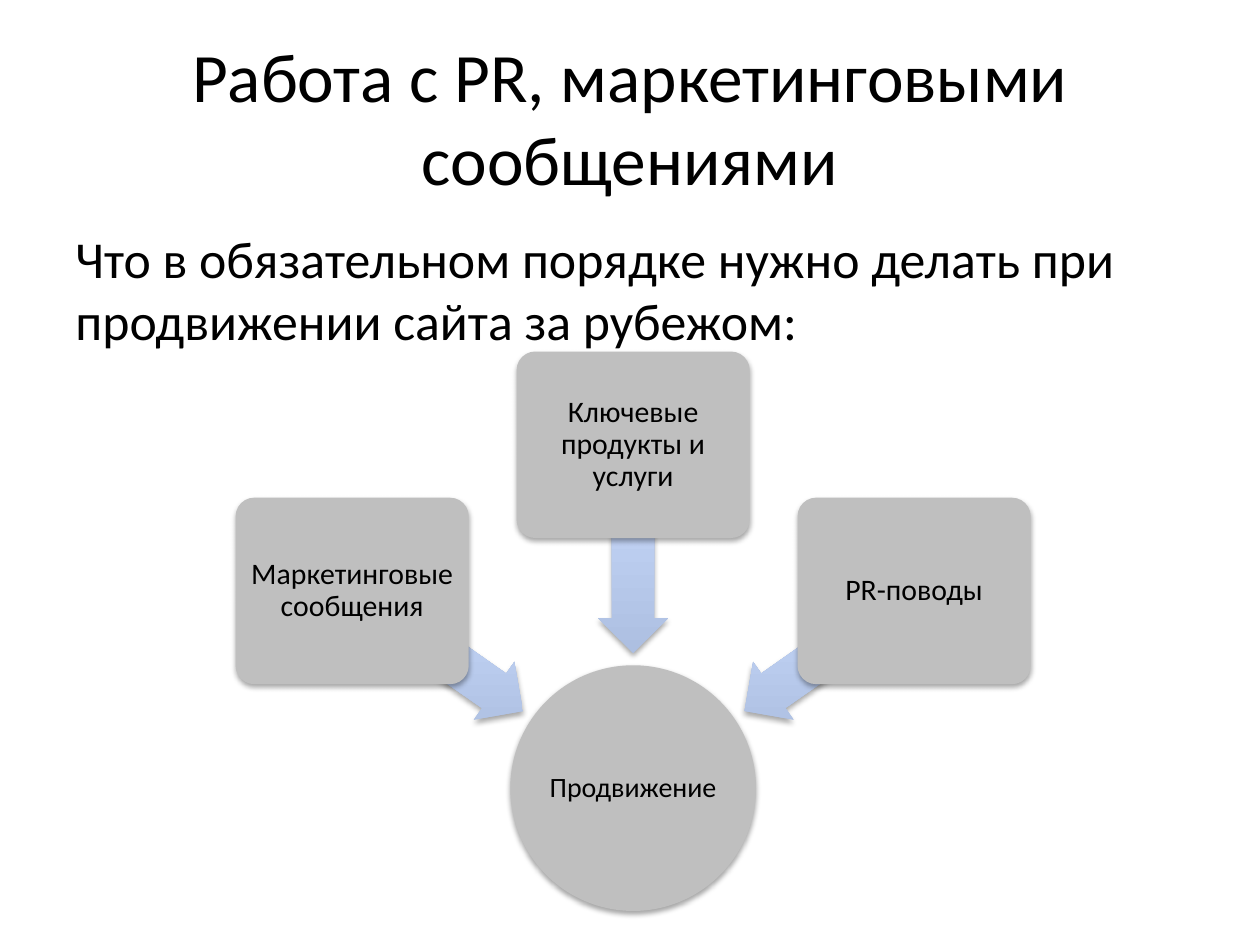
from lxml import etree
from pptx import Presentation
from pptx.dml.color import RGBColor
from pptx.enum.shapes import MSO_SHAPE as Preset
from pptx.enum.text import MSO_ANCHOR as Anchor, PP_ALIGN as Align
from pptx.oxml.ns import qn
from pptx.util import Inches, Pt

BLACK = RGBColor(0x00, 0x00, 0x00)
GREY = RGBColor(0xBF, 0xBF, 0xBF)
BLUE = RGBColor(0xAD, 0xBF, 0xE1)
LIGHT_BLUE = RGBColor(0xCC, 0xDD, 0xFF)


def add_shadowed(page, preset, left, top, width, height):
    """Add a shape without outline that casts a soft shadow downwards."""
    shape = page.shapes.add_shape(
        preset, Inches(left), Inches(top), Inches(width), Inches(height))
    shape.line.fill.background()
    shape.shadow.inherit = False
    effects = shape._element.spPr.find(qn("a:effectLst"))
    shadow = etree.SubElement(effects, qn("a:outerShdw"), blurRad="40000",
                              dist="23000", dir="5400000", rotWithShape="0")
    color = etree.SubElement(shadow, qn("a:srgbClr"), val="000000")
    etree.SubElement(color, qn("a:alpha"), val="35000")
    return shape


def fill_with_label(shape, text, size, inset):
    shape.fill.solid()
    shape.fill.fore_color.rgb = GREY
    frame = shape.text_frame
    frame.word_wrap = True
    frame.vertical_anchor = Anchor.MIDDLE
    frame.margin_left = frame.margin_right = Inches(inset)
    frame.margin_top = frame.margin_bottom = Inches(inset)
    para = frame.paragraphs[0]
    para.text = text
    para.alignment = Align.CENTER
    para.line_spacing = 0.9
    para.font.name = "Calibri"
    para.font.size = Pt(size)
    para.font.color.rgb = BLACK


deck = Presentation()
deck.slide_width, deck.slide_height = Inches(10), Inches(7.5)
page = deck.slides.add_slide(deck.slide_layouts[5])

title = page.shapes.title
title.left, title.top = Inches(0.5), Inches(0.3)
title.width, title.height = Inches(9), Inches(1.25)
title.text_frame.vertical_anchor = Anchor.MIDDLE
intro = page.shapes.add_textbox(
    Inches(0.5), Inches(1.75), Inches(8.91), Inches(0.98))
intro.text_frame.word_wrap = True

for box, text, size, alignment in (
    (title, "Работа с PR, маркетинговыми сообщениями", 39.6, Align.CENTER),
    (intro, "Что в обязательном порядке нужно делать при продвижении "
            "сайта за рубежом:", 29.6, Align.LEFT),
):
    para = box.text_frame.paragraphs[0]
    para.text = text
    para.alignment = alignment
    para.font.name = "Calibri"
    para.font.size = Pt(size)
    para.font.color.rgb = BLACK

# Three causes point at one goal
goal = add_shadowed(page, Preset.OVAL, 4.05, 5.28, 1.95, 1.95)
fill_with_label(goal, "Продвижение", 16, 0.01)

for text, left, top, arrow_left, arrow_top, rotation in (
    ("Маркетинговые сообщения", 1.87, 3.95, 2.65, 4.89, 215),
    ("Ключевые продукты и услуги", 4.1, 2.79, 4.2, 4.08, 270),
    ("PR-поводы", 6.33, 3.95, 5.76, 4.89, 325),
):
    arrow = add_shadowed(
        page, Preset.LEFT_ARROW, arrow_left, arrow_top, 1.65, 0.56)
    arrow.rotation = rotation
    arrow.adjustments[0], arrow.adjustments[1] = 0.6, 0.5
    arrow.fill.gradient()
    arrow.fill.gradient_angle = 90
    for stop, color in zip(arrow.fill.gradient_stops, (BLUE, LIGHT_BLUE)):
        stop.color.rgb = color
    # Keep the gradient upright while the arrow turns
    arrow._element.spPr.find(qn("a:gradFill")).set("rotWithShape", "0")

    cause = add_shadowed(page, Preset.ROUNDED_RECTANGLE, left, top, 1.85, 1.48)
    cause.adjustments[0] = 0.1
    fill_with_label(cause, text, 17, 0.04)

deck.save("out.pptx")
